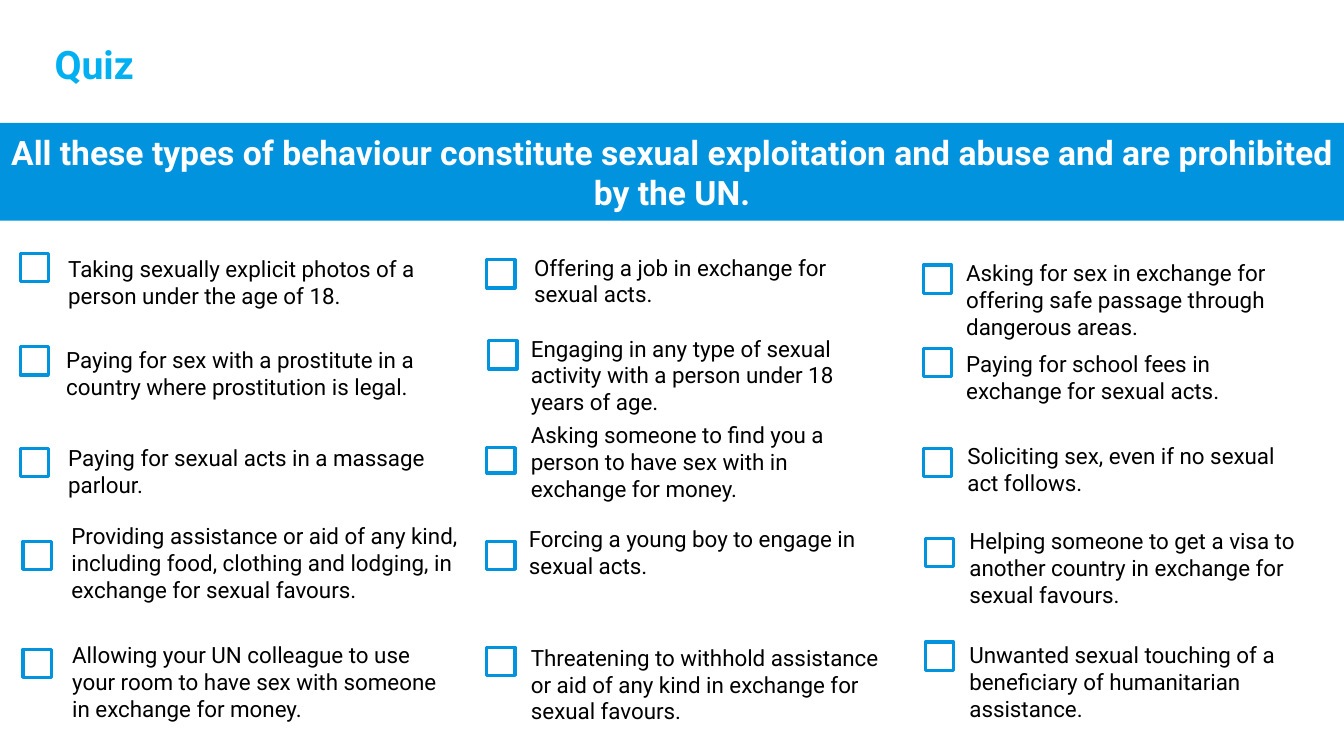
from typing import NamedTuple

from pptx import Presentation
from pptx.dml.color import RGBColor
from pptx.enum import shapes, text
from pptx.util import Cm, Pt

FONT = "Roboto"
BLUE = "0193DE"
TITLE_BLUE = "00B0F0"
WHITE = "FFFFFF"
BLACK = "000000"
BOX_SIZE = 0.71
TWO_LINES, THREE_LINES = 1.63, 2.31


class Answer(NamedTuple):
    """A checkbox position and its text, in centimetres."""
    box_left: float
    box_top: float
    left: float
    top: float
    width: float
    height: float
    wording: str
    box_height: float = BOX_SIZE


ANSWERS = [
    # Left column
    Answer(0.51, 6.38, 1.47, 6.3, 11, TWO_LINES,
           "Taking sexually explicit photos of a person under the age of 18."),
    Answer(0.51, 8.74, 1.42, 8.61, 10.19, TWO_LINES,
           "Paying for sex with a prostitute in a country where prostitution is legal."),
    Answer(0.51, 11.3, 1.47, 11.07, 10.54, 0.94,
           "Paying for sexual acts in a massage parlour."),
    Answer(0.58, 13.64, 1.55, 13.03, 10.29, THREE_LINES,
           "Providing assistance or aid of any kind, including food, clothing "
           "and lodging, in exchange for sexual favours."),
    Answer(0.58, 16.36, 1.57, 16.03, 10.03, THREE_LINES,
           "Allowing your UN colleague to use your room to have sex with someone "
           "in exchange for money."),
    # Middle column
    Answer(12.27, 6.55, 13.21, 6.27, 9.5, TWO_LINES,
           "Offering a job in exchange for sexual acts."),
    Answer(12.32, 8.59, 13.13, 8.31, 9.5, TWO_LINES,
           "Engaging in any type of sexual activity with a person under 18 years of age."),
    Answer(12.27, 11.28, 13.13, 10.49, 9.4, THREE_LINES,
           "Asking someone to find you a person to have sex with in exchange for money.",
           box_height=0.64),
    Answer(12.27, 13.64, 13.08, 13.11, 9.63, TWO_LINES,
           "Forcing a young boy to engage in sexual acts."),
    Answer(12.27, 16.31, 13.13, 16.1, 9.83, THREE_LINES,
           "Threatening to withhold assistance or aid of any kind in exchange "
           "for sexual favours."),
    # Right column
    Answer(23.27, 6.68, 24.1, 6.4, 10.11, TWO_LINES,
           "Asking for sex in exchange for offering safe passage through dangerous areas."),
    Answer(23.27, 8.79, 24.1, 8.69, 9.19, TWO_LINES,
           "Paying for school fees in exchange for sexual acts."),
    Answer(23.27, 11.3, 24.13, 11.02, 9.14, TWO_LINES,
           "Soliciting sex, even if no sexual act follows."),
    Answer(23.32, 13.56, 24.18, 13.16, 9.09, THREE_LINES,
           "Helping someone to get a visa to another country in exchange for "
           "sexual favours."),
    Answer(23.32, 16.18, 24.18, 16.03, 9.83, TWO_LINES,
           "Unwanted sexual touching of a beneficiary of humanitarian assistance."),
]


def colour(hex_string):
    return RGBColor.from_string(hex_string)


def write(shape, wording, size, hex_string, bold=False,
          align=text.PP_ALIGN.LEFT, anchor=text.MSO_ANCHOR.TOP,
          auto_size=text.MSO_AUTO_SIZE.SHAPE_TO_FIT_TEXT):
    frame = shape.text_frame
    frame.text = wording
    frame.word_wrap = True
    frame.auto_size = auto_size
    frame.vertical_anchor = anchor
    paragraph = frame.paragraphs[0]
    paragraph.alignment = align
    paragraph.font.name = FONT
    paragraph.font.size = Pt(size)
    paragraph.font.bold = bold
    paragraph.font.color.rgb = colour(hex_string)


def add_title(slide, wording):
    title = slide.shapes.title
    title.left, title.top = Cm(1.12), Cm(0.89)
    title.width, title.height = Cm(16.94), Cm(1.45)
    write(title, wording, 28, TITLE_BLUE, bold=True)


def add_rectangle(slide, left, top, width, height):
    shape = slide.shapes.add_shape(shapes.MSO_SHAPE.RECTANGLE, left, top, width, height)
    shape.shadow.inherit = False
    return shape


def add_banner(slide, width, wording):
    banner = add_rectangle(slide, 0, Cm(3.1), width, Cm(2.46))
    banner.fill.solid()
    banner.fill.fore_color.rgb = colour(BLUE)
    banner.line.fill.background()
    write(banner, wording, 24, WHITE, bold=True, align=text.PP_ALIGN.CENTER,
          anchor=text.MSO_ANCHOR.MIDDLE, auto_size=text.MSO_AUTO_SIZE.NONE)


def add_answer(slide, answer):
    label = slide.shapes.add_textbox(Cm(answer.left), Cm(answer.top),
                                     Cm(answer.width), Cm(answer.height))
    write(label, answer.wording, 16, BLACK)
    checkbox = add_rectangle(slide, Cm(answer.box_left), Cm(answer.box_top),
                             Cm(BOX_SIZE), Cm(answer.box_height))
    checkbox.fill.background()
    checkbox.line.color.rgb = colour(BLUE)
    checkbox.line.width = Pt(2.25)


def main():
    presentation = Presentation()
    presentation.slide_width = Cm(33.87)
    presentation.slide_height = Cm(19.05)
    title_only = presentation.slide_layouts[5]
    slide = presentation.slides.add_slide(title_only)

    add_title(slide, "Quiz")
    add_banner(slide, presentation.slide_width,
               "All these types of behaviour constitute sexual exploitation and abuse "
               "and are prohibited by the UN.")
    for answer in ANSWERS:
        add_answer(slide, answer)

    presentation.save("out.pptx")


if __name__ == "__main__":
    main()
